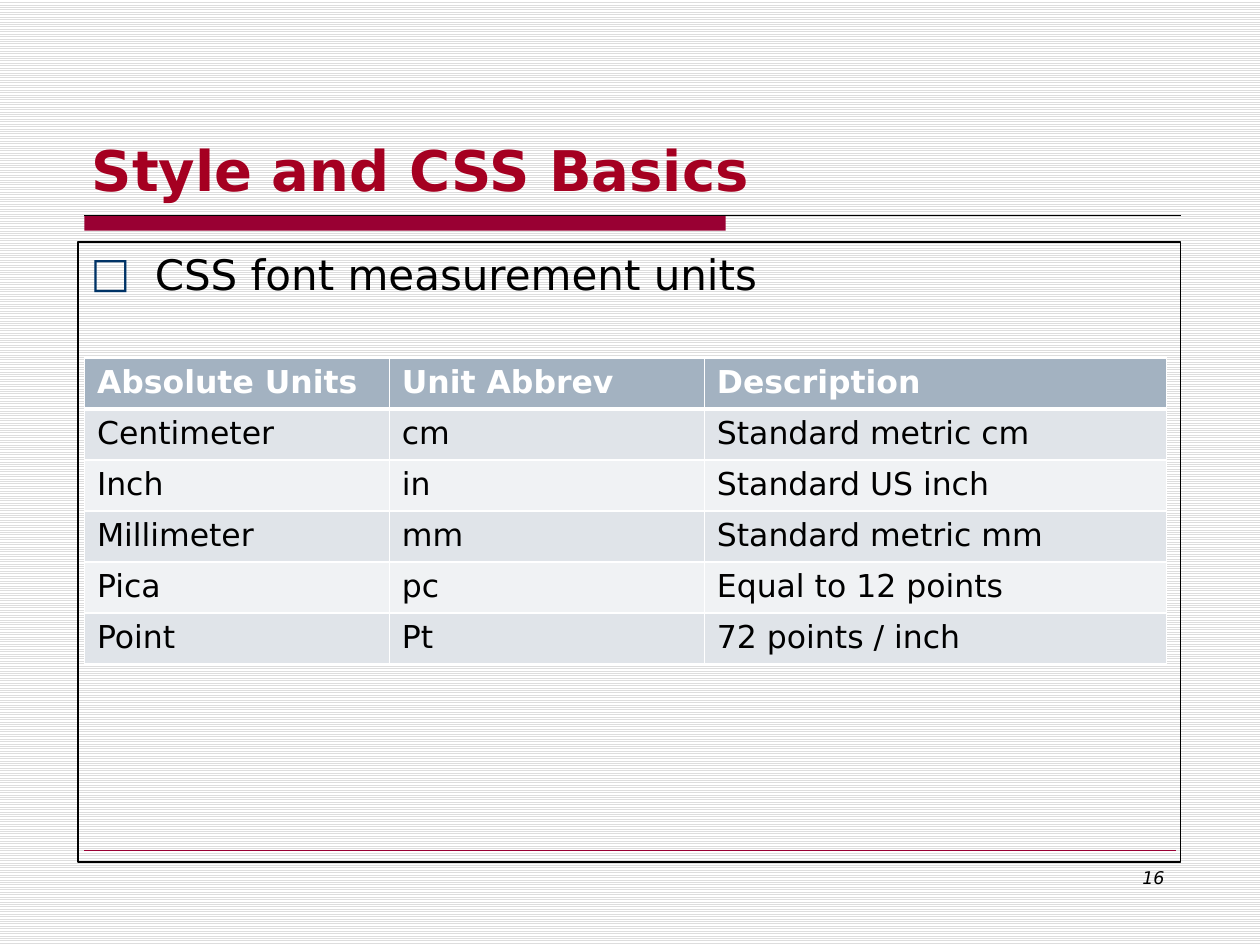
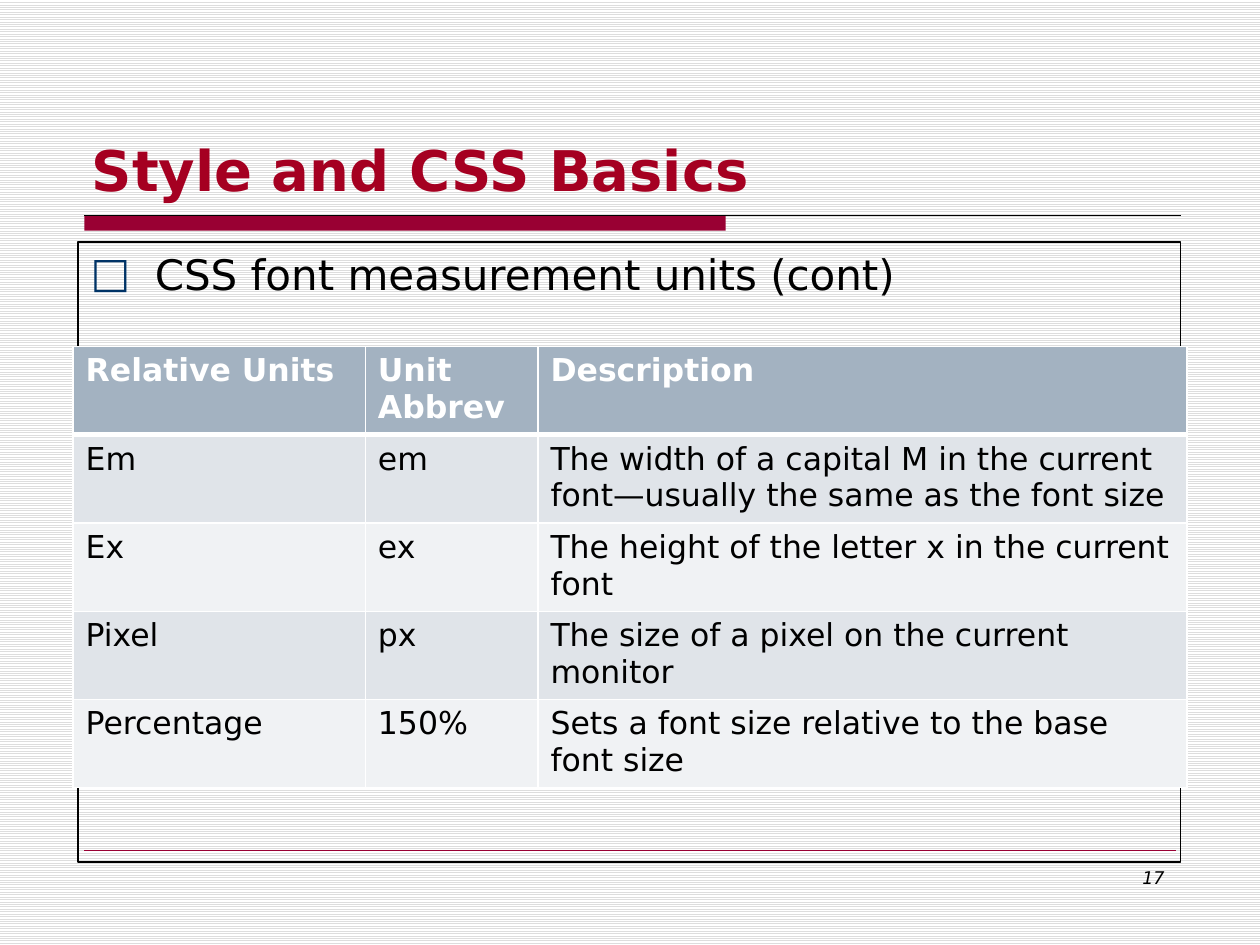
from dataclasses import dataclass

from lxml.etree import SubElement
from pptx import Presentation
from pptx.dml.color import RGBColor
from pptx.enum.dml import MSO_PATTERN
from pptx.enum.shapes import MSO_CONNECTOR, MSO_SHAPE
from pptx.enum.text import MSO_ANCHOR, PP_ALIGN
from pptx.oxml.ns import qn
from pptx.slide import Slide
from pptx.table import _Cell as Cell
from pptx.text.text import TextFrame, _Paragraph as Para
from pptx.util import Inches, Pt

RECT = MSO_SHAPE.RECTANGLE
STRAIGHT = MSO_CONNECTOR.STRAIGHT
STRIPES = MSO_PATTERN.LIGHT_HORIZONTAL
TOP, BOTTOM = MSO_ANCHOR.TOP, MSO_ANCHOR.BOTTOM
LEFT, RIGHT = PP_ALIGN.LEFT, PP_ALIGN.RIGHT

FONT = "DejaVu Sans"
TITLE = "Style and CSS Basics"
COLORS = {
    "title": "A50021", "band": "990033", "bullet": "003366",
    "text": "000000", "white": "FFFFFF", "stripe": "DDDDDD",
    "head": "A3B2C1", "odd": "E0E4E9", "even": "F0F2F4",
}


@dataclass
class Grid:
    left: float
    top: float
    widths: list[float]
    height: float  # of one row
    rows: list[tuple[str, str, str]]


@dataclass
class Page:
    number: int
    topic: str
    grid: Grid


PAGES = [
    Page(16, "CSS font measurement units", Grid(0.67, 2.84, [2.42, 2.5, 3.67], 0.405, [
        ("Absolute Units", "Unit Abbrev", "Description"),
        ("Centimeter", "cm", "Standard metric cm"),
        ("Inch", "in", "Standard US inch"),
        ("Millimeter", "mm", "Standard metric mm"),
        ("Pica", "pc", "Equal to 12 points"),
        ("Point", "Pt", "72 points / inch"),
    ])),
    Page(17, "CSS font measurement units (cont)", Grid(0.58, 2.75, [2.32, 1.37, 5.15], 0.68, [
        ("Relative Units", "Unit Abbrev", "Description"),
        ("Em", "em", "The width of a capital M in the current font—usually the same as the font size"),
        ("Ex", "ex", "The height of the letter x in the current font"),
        ("Pixel", "px", "The size of a pixel on the current monitor"),
        ("Percentage", "150%", "Sets a font size relative to the base font size"),
    ])),
]


def color(name: str) -> RGBColor:
    return RGBColor.from_string(COLORS[name])


def write(frame: TextFrame, text: str, size: float, hue: str = "text",
          bold: bool = False, italic: bool = False, align: PP_ALIGN = LEFT) -> None:
    frame.word_wrap = True
    para = frame.paragraphs[0]
    para.text = text
    para.alignment = align
    font = para.font
    font.name, font.size, font.bold, font.italic = FONT, Pt(size), bold, italic
    font.color.rgb = color(hue)


def add_text(slide: Slide, box: tuple[float, ...], anchor: MSO_ANCHOR = TOP) -> TextFrame:
    frame = slide.shapes.add_textbox(*map(Inches, box)).text_frame
    frame.vertical_anchor = anchor
    return frame


def add_rule(slide: Slide, right: float, y: float, hue: str, width: float) -> None:
    """Draw a level line from the left margin."""
    rule = slide.shapes.add_connector(STRAIGHT, Inches(0.67), Inches(y), Inches(right), Inches(y))
    rule.line.color.rgb = color(hue)
    rule.line.width = Pt(width)
    SubElement(rule._element.spPr, qn("a:effectLst"))


def add_bullet(para: Para) -> None:
    props = para._p.get_or_add_pPr()
    props.set("marL", str(Inches(0.51)))
    props.set("indent", str(-Inches(0.51)))
    tint = SubElement(props, qn("a:buClr"))
    SubElement(tint, qn("a:srgbClr"), val=COLORS["bullet"])
    SubElement(props, qn("a:buFont"), typeface=FONT)
    SubElement(props, qn("a:buChar"), char="□")


def add_frame(slide: Slide) -> None:
    """Draw the backdrop, title, band and lines that all slides share."""
    fill = slide.background.fill
    fill.patterned()
    fill.pattern = STRIPES
    fill.fore_color.rgb = color("stripe")
    fill.back_color.rgb = color("white")

    band = slide.shapes.add_shape(RECT, Inches(0.67), Inches(1.71), Inches(5.09), Inches(0.12))
    band.shadow.inherit = False
    band.fill.solid()
    band.fill.fore_color.rgb = color("band")
    band.line.fill.background()
    add_rule(slide, 9.37, 1.71, "text", 0.75)
    add_rule(slide, 9.33, 6.75, "band", 0.25)
    write(add_text(slide, (0.63, 1.08, 8.75, 0.58), BOTTOM), TITLE, 32, "title", bold=True)


def add_body(slide: Slide, topic: str) -> None:
    body = slide.shapes.add_shape(RECT, Inches(0.62), Inches(1.92), Inches(8.75), Inches(4.92))
    body.shadow.inherit = False
    body.fill.background()
    body.line.color.rgb = color("text")
    body.line.width = Pt(1)
    frame = body.text_frame
    frame.vertical_anchor = TOP
    add_bullet(frame.paragraphs[0])
    write(frame, topic, 24)


def add_edges(cell: Cell, row: int) -> None:
    """Give a cell white borders, thick between head and body."""
    thick = {0: "lnB", 1: "lnT"}.get(row)
    for side in ("lnL", "lnR", "lnT", "lnB"):
        width = Pt(3 if side == thick else 1)
        edge = SubElement(cell._tc.get_or_add_tcPr(), qn(f"a:{side}"), w=str(width))
        paint = SubElement(edge, qn("a:solidFill"))
        SubElement(paint, qn("a:srgbClr"), val=COLORS["white"])


def add_grid(slide: Slide, grid: Grid) -> None:
    count = len(grid.rows)
    table = slide.shapes.add_table(
        count, len(grid.widths), Inches(grid.left), Inches(grid.top),
        Inches(sum(grid.widths)), Inches(grid.height * count)).table
    table.horz_banding = False
    for column, width in zip(table.columns, grid.widths):
        column.width = Inches(width)
    for r, texts in enumerate(grid.rows):
        table.rows[r].height = Inches(grid.height)
        head = r == 0
        shade = "head" if head else "odd" if r % 2 else "even"
        for c, text in enumerate(texts):
            cell = table.cell(r, c)
            add_edges(cell, r)
            cell.fill.solid()
            cell.fill.fore_color.rgb = color(shade)
            write(cell.text_frame, text, 18, "white" if head else "text", bold=head)


def main() -> None:
    deck = Presentation()
    deck.slide_width, deck.slide_height = Inches(10), Inches(7.5)
    blank = deck.slide_layouts[6]
    for page in PAGES:
        slide = deck.slides.add_slide(blank)
        add_frame(slide)
        add_body(slide, page.topic)
        write(add_text(slide, (7.17, 6.83, 2.17, 0.52)), str(page.number), 10,
              italic=True, align=RIGHT)
        add_grid(slide, page.grid)
    deck.save("out.pptx")


if __name__ == "__main__":
    main()
